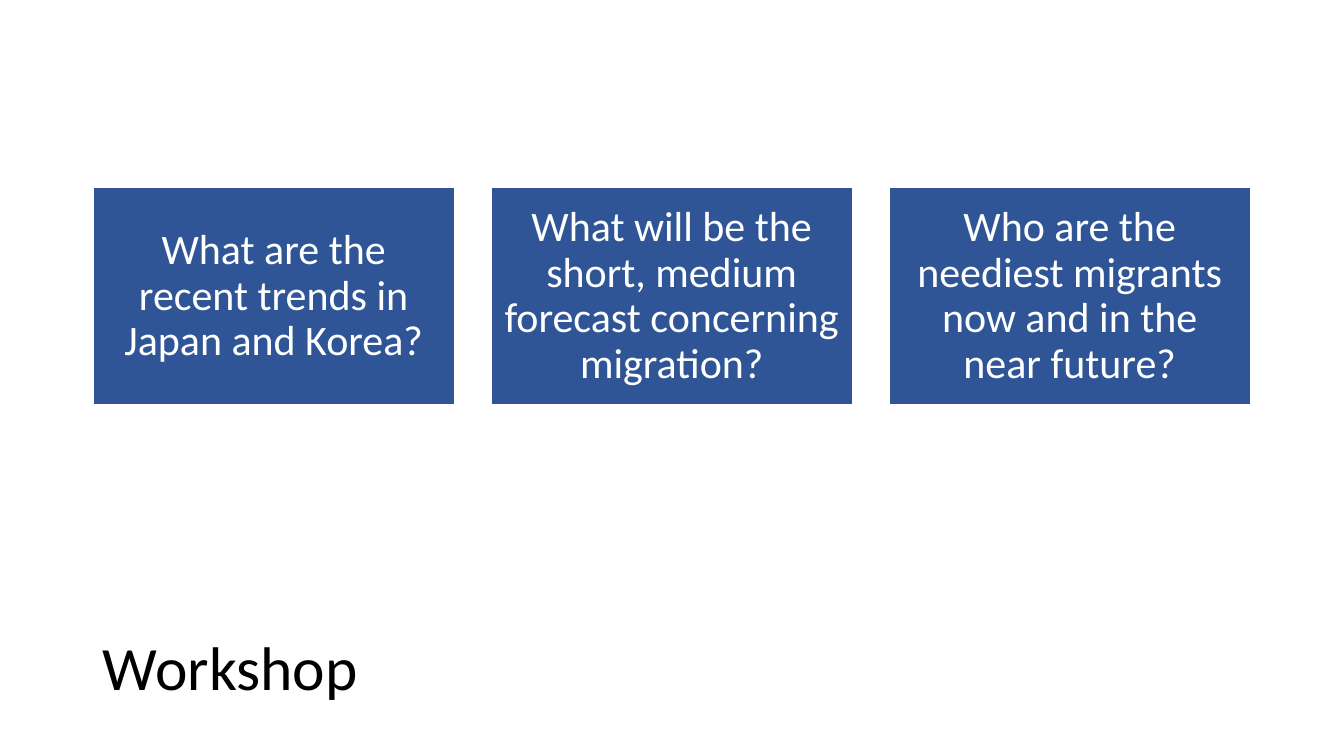
from dataclasses import dataclass

from pptx import Presentation
from pptx.dml.color import RGBColor
from pptx.enum.shapes import MSO_SHAPE
from pptx.enum.text import MSO_ANCHOR, MSO_AUTO_SIZE, PP_ALIGN
from pptx.util import Cm, Pt

TITLE_ONLY_LAYOUT = 5


@dataclass(frozen=True)
class Theme:
    font: str = "Calibri"
    title_size: int = 44
    question_size: int = 30
    title_color: RGBColor = RGBColor(0x00, 0x00, 0x00)
    card_fill: RGBColor = RGBColor(0x2F, 0x55, 0x97)
    card_text: RGBColor = RGBColor(0xFF, 0xFF, 0xFF)
    card_line: RGBColor = RGBColor(0xFF, 0xFF, 0xFF)


THEME = Theme()

QUESTIONS = (
    "What are the recent trends in Japan and Korea?",
    "What will be the short, medium forecast concerning migration?",
    "Who are the neediest migrants now and in the near future?",
)

LEFT_MARGIN = 2.34
CARD_TOP, CARD_WIDTH, CARD_HEIGHT = 4.73, 9.12, 5.48
CARD_GAP = 0.91
CARD_INSET = 0.3


def write_text(shape, text, size, color, alignment):
    """Fill the shape with one vertically centred, wrapped paragraph."""
    frame = shape.text_frame
    frame.text = text
    frame.word_wrap = True
    frame.auto_size = MSO_AUTO_SIZE.NONE
    frame.vertical_anchor = MSO_ANCHOR.MIDDLE
    paragraph = frame.paragraphs[0]
    paragraph.alignment = alignment
    paragraph.line_spacing = 0.9
    font = paragraph.runs[0].font
    font.name = THEME.font
    font.size = Pt(size)
    font.color.rgb = color


def set_title(slide, text):
    title = slide.shapes.title
    title.left, title.top = Cm(LEFT_MARGIN), Cm(15.37)
    title.width, title.height = Cm(21.44), Cm(3.05)
    write_text(title, text, THEME.title_size, THEME.title_color, PP_ALIGN.LEFT)


def add_question_card(slide, left, question):
    card = slide.shapes.add_shape(
        MSO_SHAPE.RECTANGLE,
        Cm(left), Cm(CARD_TOP), Cm(CARD_WIDTH), Cm(CARD_HEIGHT),
    )
    card.shadow.inherit = False
    card.fill.solid()
    card.fill.fore_color.rgb = THEME.card_fill
    card.line.color.rgb = THEME.card_line
    card.line.width = Pt(1)
    frame = card.text_frame
    frame.margin_left = frame.margin_right = Cm(CARD_INSET)
    frame.margin_top = frame.margin_bottom = Cm(CARD_INSET)
    write_text(card, question, THEME.question_size, THEME.card_text, PP_ALIGN.CENTER)


def main():
    presentation = Presentation()
    presentation.slide_width = Cm(33.87)
    presentation.slide_height = Cm(19.05)
    layout = presentation.slide_layouts[TITLE_ONLY_LAYOUT]
    slide = presentation.slides.add_slide(layout)

    set_title(slide, "Workshop")
    for index, question in enumerate(QUESTIONS):
        left = LEFT_MARGIN + index * (CARD_WIDTH + CARD_GAP)
        add_question_card(slide, left, question)

    presentation.save("out.pptx")


if __name__ == "__main__":
    main()
